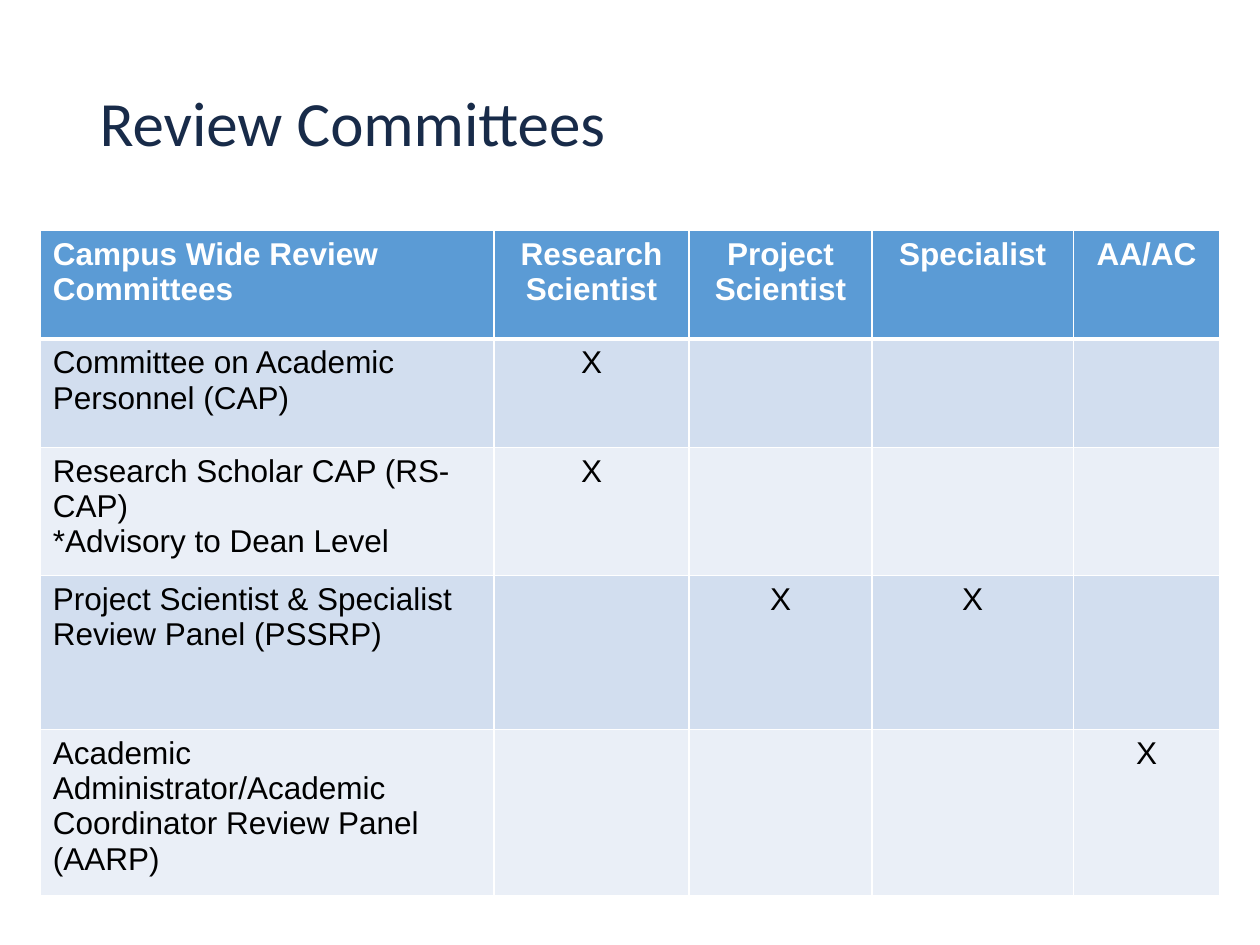
from typing import NamedTuple

from lxml.etree import SubElement
from pptx import Presentation
from pptx.dml.color import RGBColor
from pptx.enum.text import MSO_ANCHOR, MSO_AUTO_SIZE, PP_ALIGN
from pptx.oxml.ns import qn
from pptx.util import Inches, Pt

COLORS = {
    "title": "182B49",
    "header": "5B9BD5",
    "band_dark": "D2DEEF",
    "band_light": "EAEFF7",
    "text": "000000",
    "white": "FFFFFF",
}
TITLE_FONT = {"name": "Calibri", "size": Pt(36), "bold": False}
HEADER_FONT = {"name": "Arial", "size": Pt(18), "bold": True}
BODY_FONT = {**HEADER_FONT, "bold": False}


class Column(NamedTuple):
    heading: str
    width: float


class Committee(NamedTuple):
    name: str
    reviews: tuple[str, ...]
    height: float


COLUMNS = [
    Column("Campus Wide Review Committees", 3.6),
    Column("Research Scientist", 1.55),
    Column("Project Scientist", 1.45),
    Column("Specialist", 1.6),
    Column("AA/AC", 1.16),
]
HEADER_HEIGHT = 0.86
COMMITTEES = [
    Committee("Committee on Academic Personnel (CAP)", ("Research Scientist",), 0.86),
    Committee("Research Scholar CAP (RS-CAP)\n*Advisory to Dean Level",
              ("Research Scientist",), 1.02),
    Committee("Project Scientist & Specialist Review Panel (PSSRP)",
              ("Project Scientist", "Specialist"), 1.22),
    Committee("Academic Administrator/Academic Coordinator Review Panel (AARP)",
              ("AA/AC",), 1.32),
]


def format_font(font, values: dict, color: str) -> None:
    for name, value in values.items():
        setattr(font, name, value)
    font.color.rgb = RGBColor.from_string(COLORS[color])


def set_borders(cell, top: float, bottom: float) -> None:
    """Draw white cell borders; top and bottom are widths in points."""
    tc_pr = cell._tc.get_or_add_tcPr()
    widths = {"a:lnL": 1, "a:lnR": 1, "a:lnT": top, "a:lnB": bottom}
    for index, (tag, width) in enumerate(widths.items()):
        ln = tc_pr.makeelement(qn(tag), {"w": str(Pt(width))})
        fill = SubElement(ln, qn("a:solidFill"))
        SubElement(fill, qn("a:srgbClr"), val=COLORS["white"])
        tc_pr.insert(index, ln)


def fill_cell(cell, text: str, row: int, col: int) -> None:
    is_header = row == 0
    band = "header" if is_header else "band_dark" if row % 2 else "band_light"
    cell.fill.solid()
    cell.fill.fore_color.rgb = RGBColor.from_string(COLORS[band])
    set_borders(cell, top=3 if row == 1 else 1, bottom=3 if is_header else 1)
    cell.text = text
    for p in cell.text_frame.paragraphs:
        p.alignment = PP_ALIGN.CENTER if col else PP_ALIGN.LEFT
        format_font(p.font, HEADER_FONT if is_header else BODY_FONT,
                    "white" if is_header else "text")
        for r in p.runs:
            format_font(r.font, HEADER_FONT if is_header else BODY_FONT,
                        "white" if is_header else "text")


def add_title(s, text: str) -> None:
    sp = s.shapes.title
    sp.left, sp.top = Inches(0.69), Inches(0.68)
    sp.width, sp.height = Inches(8.62), Inches(1.15)
    tf = sp.text_frame
    tf.text = text
    tf.word_wrap = True
    tf.auto_size = MSO_AUTO_SIZE.NONE
    tf.vertical_anchor = MSO_ANCHOR.TOP
    p = tf.paragraphs[0]
    p.alignment = PP_ALIGN.LEFT
    p.line_spacing = 0.9
    format_font(p.runs[0].font, TITLE_FONT, "title")


def add_committee_table(s) -> None:
    heights = [HEADER_HEIGHT] + [c.height for c in COMMITTEES]
    rows = [[c.heading for c in COLUMNS]]
    for committee in COMMITTEES:
        marks = ["X" if c.heading in committee.reviews else "" for c in COLUMNS[1:]]
        rows.append([committee.name, *marks])

    table = s.shapes.add_table(
        len(rows), len(COLUMNS), Inches(0.32), Inches(1.83),
        Inches(sum(c.width for c in COLUMNS)), Inches(sum(heights))).table
    for col, column in enumerate(COLUMNS):
        table.columns[col].width = Inches(column.width)
    for row, texts in enumerate(rows):
        table.rows[row].height = Inches(heights[row])
        for col, text in enumerate(texts):
            fill_cell(table.cell(row, col), text, row, col)


def main() -> None:
    prs = Presentation()
    prs.slide_width, prs.slide_height = Inches(10), Inches(7.5)
    s = prs.slides.add_slide(prs.slide_layouts.get_by_name("Title Only"))
    add_title(s, "Review Committees")
    add_committee_table(s)
    prs.save("out.pptx")


if __name__ == "__main__":
    main()
